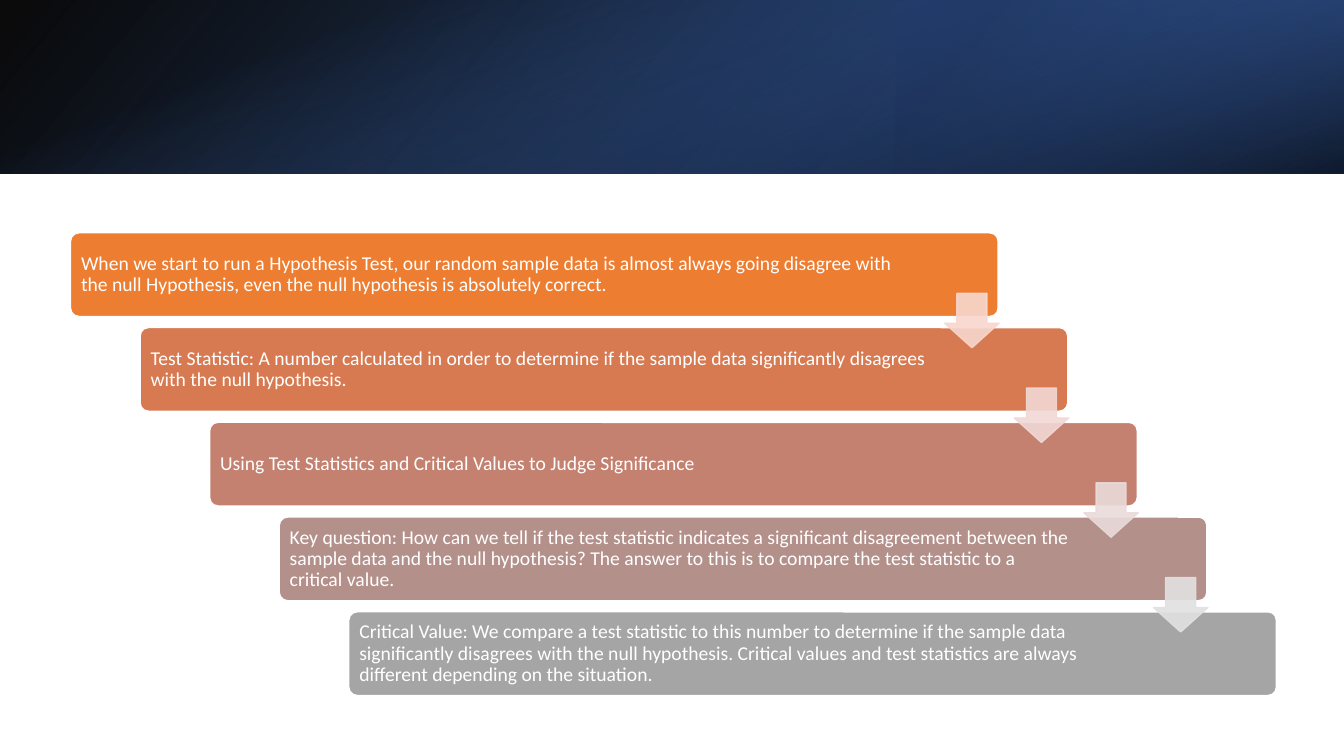
import pptx
import pptx.util
import pptx.dml.color
import pptx.enum.shapes
import pptx.enum.text
import pptx.oxml
import pptx.oxml.ns
from dataclasses import dataclass
from lxml import etree

# Text, box colour, colour of the arrow to the next step
STEPS = [
    ("When we start to run a Hypothesis Test, our random sample data is almost always going "
     "disagree with the null Hypothesis, even the null hypothesis is absolutely correct.",
     "ED7D31", "F8D7CE"),
    ("Test Statistic: A number calculated in order to determine if the sample data "
     "significantly disagrees with the null hypothesis.",
     "D87A51", "F1D8D4"),
    ("Using Test Statistics and Critical Values to Judge Significance",
     "C48170", "E9DBDA"),
    ("Key question: How can we tell if the test statistic indicates a significant disagreement "
     "between the sample data and the null hypothesis? The answer to this is to compare the "
     "test statistic to a critical value.",
     "B4908B", "E1E1E1"),
    ("Critical Value: We compare a test statistic to this number to determine if the sample data "
     "significantly disagrees with the null hypothesis. Critical values and test statistics are "
     "always different depending on the situation.",
     "A5A5A5", None),
]


@dataclass(frozen=True)
class Theme:
    font: str = "Calibri"
    size: int = 14
    text: str = "FFFFFF"
    outline: str = "FFFFFF"
    arrow_opacity: int = 90


THEME = Theme()
WIDTH, HEIGHT = 13.33, 7.5
BANNER = 1.72
STEP_LEFT, STEP_TOP = 0.7, 2.31
SHIFT, PITCH = 0.69, 0.94
STEP_WIDTH, STEP_HEIGHT = 9.2, 0.83
ARROW_SIZE, ARROW_LEFT, ARROW_TOP = 0.54, 8.67, 0.6
INSET = 0.08
FIRST_RIGHT_INSET, RIGHT_INSET = 1.02, 1.3

# Frame, rotation, mirrored, gradient angle, stops of (position, colour, opacity)
BANNER_LAYERS = [
    ((0, 0, WIDTH, BANNER), 0, True, 140, [(0, "000000", 96), (100, "2F5597", 100)]),
    ((WIDTH * 2 / 3, 0, WIDTH / 3, BANNER), 180, True, 320,
     [(19, "203864", 68), (100, "4472C4", 79)]),
    (((WIDTH - BANNER) / 2, (BANNER - WIDTH) / 2, BANNER, WIDTH), 90, False, 340,
     [(23, "4472C4", 0), (99, "000000", 74)]),
]

KINDS = pptx.enum.shapes.MSO_SHAPE
inches = pptx.util.Inches
rgb = pptx.dml.color.RGBColor.from_string
qn = pptx.oxml.ns.qn


def add_shape(slide, kind, frame, adjustments=()):
    shape = slide.shapes.add_shape(kind, *map(inches, frame))
    shape.shadow.inherit = False
    for index, value in enumerate(adjustments):
        shape.adjustments[index] = value
    return shape


def paint(shape, fill, outline):
    shape.fill.solid()
    shape.fill.fore_color.rgb = rgb(fill)
    shape.line.color.rgb = rgb(outline)
    shape.line.width = pptx.util.Pt(1)


def set_opacity(shape, percent):
    for color in shape._element.spPr.iter(qn("a:srgbClr")):
        etree.SubElement(color, qn("a:alpha"), val=str(percent * 1000))


def add_banner_layer(slide, frame, rotation, mirrored, angle, stops):
    shape = add_shape(slide, KINDS.RECTANGLE, frame)
    shape.rotation = rotation
    shape.line.fill.background()
    properties = shape._element.spPr
    if mirrored:
        properties.find(qn("a:xfrm")).set("flipH", "1")
    stop_xml = "".join(
        f'<a:gs pos="{position * 1000}"><a:srgbClr val="{color}">'
        f'<a:alpha val="{opacity * 1000}"/></a:srgbClr></a:gs>'
        for position, color, opacity in stops)
    gradient = pptx.oxml.parse_xml(
        f'<a:gradFill {pptx.oxml.ns.nsdecls("a")} rotWithShape="1"><a:gsLst>{stop_xml}</a:gsLst>'
        f'<a:lin ang="{angle * 60000}" scaled="0"/></a:gradFill>')
    properties.find(qn("a:prstGeom")).addnext(gradient)


def add_step(slide, index, text, color):
    frame = (STEP_LEFT + index * SHIFT, STEP_TOP + index * PITCH, STEP_WIDTH, STEP_HEIGHT)
    shape = add_shape(slide, KINDS.ROUNDED_RECTANGLE, frame, [0.1])
    paint(shape, color, THEME.outline)
    text_frame = shape.text_frame
    text_frame.word_wrap = True
    text_frame.vertical_anchor = pptx.enum.text.MSO_ANCHOR.MIDDLE
    text_frame.margin_left = text_frame.margin_top = text_frame.margin_bottom = inches(INSET)
    text_frame.margin_right = inches(RIGHT_INSET if index else FIRST_RIGHT_INSET)
    text_frame.text = text
    paragraph = text_frame.paragraphs[0]
    paragraph.alignment = pptx.enum.text.PP_ALIGN.LEFT
    paragraph.line_spacing = 0.9
    font = paragraph.runs[0].font
    font.name = THEME.font
    font.size = pptx.util.Pt(THEME.size)
    font.color.rgb = rgb(THEME.text)


def add_arrow(slide, index, color):
    frame = (STEP_LEFT + index * SHIFT + ARROW_LEFT, STEP_TOP + index * PITCH + ARROW_TOP,
             ARROW_SIZE, ARROW_SIZE)
    # Adjustments of a down arrow: shaft width, head length
    shape = add_shape(slide, KINDS.DOWN_ARROW, frame, [0.55, 0.45])
    paint(shape, color, color)
    set_opacity(shape, THEME.arrow_opacity)


def main():
    presentation = pptx.Presentation()
    presentation.slide_width = inches(WIDTH)
    presentation.slide_height = inches(HEIGHT)
    slide = presentation.slides.add_slide(presentation.slide_layouts[6])
    for layer in BANNER_LAYERS:
        add_banner_layer(slide, *layer)
    for index, (text, color, _) in enumerate(STEPS):
        add_step(slide, index, text, color)
    for index, (_, _, arrow_color) in enumerate(STEPS):
        if arrow_color:
            add_arrow(slide, index, arrow_color)
    presentation.save("out.pptx")


if __name__ == "__main__":
    main()
